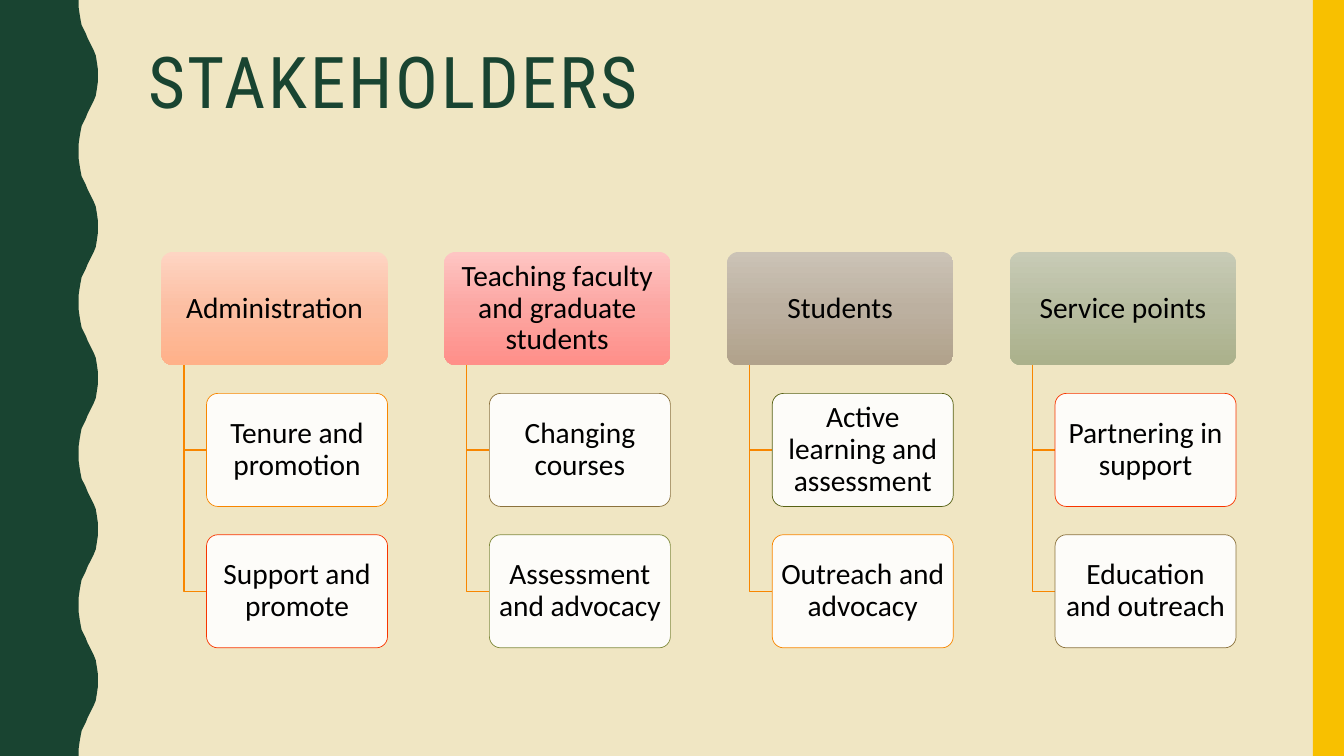
import copy

import pptx
import pptx.dml.color
import pptx.enum.shapes
import pptx.enum.text
import pptx.oxml
import pptx.oxml.ns
import pptx.util

Inches = pptx.util.Inches
Pt = pptx.util.Pt
qn = pptx.oxml.ns.qn
ROUNDED = pptx.enum.shapes.MSO_SHAPE.ROUNDED_RECTANGLE

COLORS = {
    "sand": "F0E6C3", "green": "194431", "gold": "F8C000", "orange": "F88600",
    "red": "F83500", "brown": "8B723D", "olive": "818B3D", "moss": "586215",
    "white": "FFFFFF", "black": "000000",
    "peach": ("FED5C3", "FCBEA2", "FFB189"),
    "coral": ("FEC5C3", "FCA6A2", "FF8F89"),
    "taupe": ("CBC3B6", "BCB0A0", "B1A28B"),
    "sage": ("C8CBB6", "B7BCA0", "ABB18B"),
}

GROUPS = [
    ("Administration", "peach",
     [("Tenure and promotion", "orange"), ("Support and promote", "red")]),
    ("Teaching faculty and graduate students", "coral",
     [("Changing courses", "brown"), ("Assessment and advocacy", "olive")]),
    ("Students", "taupe",
     [("Active learning and assessment", "moss"), ("Outreach and advocacy", "orange")]),
    ("Service points", "sage",
     [("Partnering in support", "red"), ("Education and outreach", "brown")]),
]

# First half of one wave; the second half mirrors it.
HALF_WAVE = [(0.78, 0), (0.78, 0.07), (0.79, 0.14), (0.8, 0.2), (0.81, 0.25),
             (0.83, 0.29), (0.85, 0.33), (0.87, 0.38), (0.89, 0.42), (0.91, 0.46),
             (0.93, 0.5), (0.95, 0.55), (0.96, 0.61), (0.97, 0.68), (0.97, 0.75)]
WAVE_HEIGHT = 1.5


def rgb(name):
    return pptx.dml.color.RGBColor.from_string(COLORS.get(name, name))


def fill_solid(shape, color):
    shape.shadow.inherit = False
    shape.fill.solid()
    shape.fill.fore_color.rgb = rgb(color)


def fill_gradient(shape, shades):
    """Fill from top to bottom with three evenly spaced shades."""
    shape.fill.gradient()
    shape.fill.gradient_angle = 270
    stop_list = shape.fill._xPr.find(".//" + qn("a:gsLst"))
    stop_list.insert(1, copy.deepcopy(stop_list[0]))
    for stop, position, shade in zip(shape.fill.gradient_stops, (0, 0.5, 1), shades):
        stop.position = position
        stop.color.rgb = rgb(shade)


def add_outline(slide, points, closed):
    """Draw straight segments through points given in inches."""
    corners = [(Inches(x), Inches(y)) for x, y in points]
    builder = slide.shapes.build_freeform(*corners[0])
    builder.add_line_segments(corners[1:], close=closed)
    outline = builder.convert_to_shape()
    outline.shadow.inherit = False
    return outline


def add_side_bands(slide, width, height):
    edge = [(0, 0)]
    for wave in range(round(height / WAVE_HEIGHT)):
        top = wave * WAVE_HEIGHT
        edge += [(x, top + y) for x, y in HALF_WAVE]
        edge += [(x, top + WAVE_HEIGHT - y) for x, y in HALF_WAVE[-2::-1]]
    edge.append((0, height))
    wavy_band = add_outline(slide, edge, True)
    fill_solid(wavy_band, "green")
    wavy_band.line.fill.background()

    gold_band = slide.shapes.add_shape(
        pptx.enum.shapes.MSO_SHAPE.RECTANGLE,
        Inches(width - 0.31), 0, Inches(0.31), Inches(height))
    fill_solid(gold_band, "gold")
    gold_band.line.fill.background()


def add_heading(slide, left, top, width, height):
    heading = slide.shapes.add_textbox(
        Inches(left), Inches(top), Inches(width), Inches(height))
    heading.text_frame.word_wrap = True
    paragraph = heading.text_frame.paragraphs[0]
    paragraph.line_spacing = 0.9
    run = paragraph.add_run()
    run.text = "STAKEHOLDERS"
    run.font.name = "Roboto Condensed"
    run.font.size = Pt(51)
    run.font.color.rgb = rgb("green")
    run._r.get_or_add_rPr().set("spc", "200")


def add_card(slide, wording, left, top, width, height):
    card = slide.shapes.add_shape(
        ROUNDED, Inches(left), Inches(top), Inches(width), Inches(height))
    card.adjustments[0] = 0.1
    card.shadow.inherit = False
    frame = card.text_frame
    frame.word_wrap = True
    frame.vertical_anchor = pptx.enum.text.MSO_ANCHOR.MIDDLE
    frame.margin_left = frame.margin_right = Inches(0.04)
    frame.margin_top = frame.margin_bottom = Inches(0.03)
    paragraph = frame.paragraphs[0]
    paragraph.alignment = pptx.enum.text.PP_ALIGN.CENTER
    paragraph.line_spacing = 0.9
    run = paragraph.add_run()
    run.text = wording
    run.font.name = "Calibri"
    run.font.size = Pt(21)
    run.font.color.rgb = rgb("black")
    return card


def add_group(slide, group, left, top, width):
    """Place a stakeholder card with its interests branching off below it."""
    stakeholder, shades, interests = group
    card_height = width / 2
    indent = width / 5
    pitch = card_height * 1.25
    header = add_card(slide, stakeholder, left, top, width, card_height)
    fill_gradient(header, COLORS[shades])
    header.line.fill.background()

    trunk = left + indent / 2
    for row, (interest, border) in enumerate(interests, start=1):
        card_top = top + row * pitch
        middle = card_top + card_height / 2
        branch = add_outline(slide, [(trunk, top + card_height), (trunk, middle),
                                     (left + indent, middle)], False)
        branch.fill.background()
        branch.line.color.rgb = rgb("orange")
        branch.line.width = Pt(1)

        card = add_card(slide, interest, left + indent, card_top,
                        width * 0.8, card_height)
        fill_solid(card, "white")
        white = card.fill._xPr.find(qn("a:solidFill"))[0]
        white.append(pptx.oxml.parse_xml(
            f'<a:alpha {pptx.oxml.ns.nsdecls("a")} val="90000"/>'))
        card.line.color.rgb = rgb(border)
        card.line.width = Pt(0.5)


def add_hierarchy(slide, left, top, width):
    """Spread the groups over the width, with gaps a quarter of a card wide."""
    card_width = width / (len(GROUPS) * 1.25 - 0.25)
    for column, group in enumerate(GROUPS):
        add_group(slide, group, left + column * card_width * 1.25, top, card_width)


def main():
    deck = pptx.Presentation()
    width, height = 13.33, 7.5
    deck.slide_width, deck.slide_height = Inches(width), Inches(height)
    slide = deck.slides.add_slide(deck.slide_layouts[6])
    slide.background.fill.solid()
    slide.background.fill.fore_color.rgb = rgb("sand")
    add_side_bands(slide, width, height)
    add_heading(slide, 1.37, 0.42, 11.13, 1.63)
    add_hierarchy(slide, 1.6, 2.5, 10.66)
    deck.save("out.pptx")


if __name__ == "__main__":
    main()
